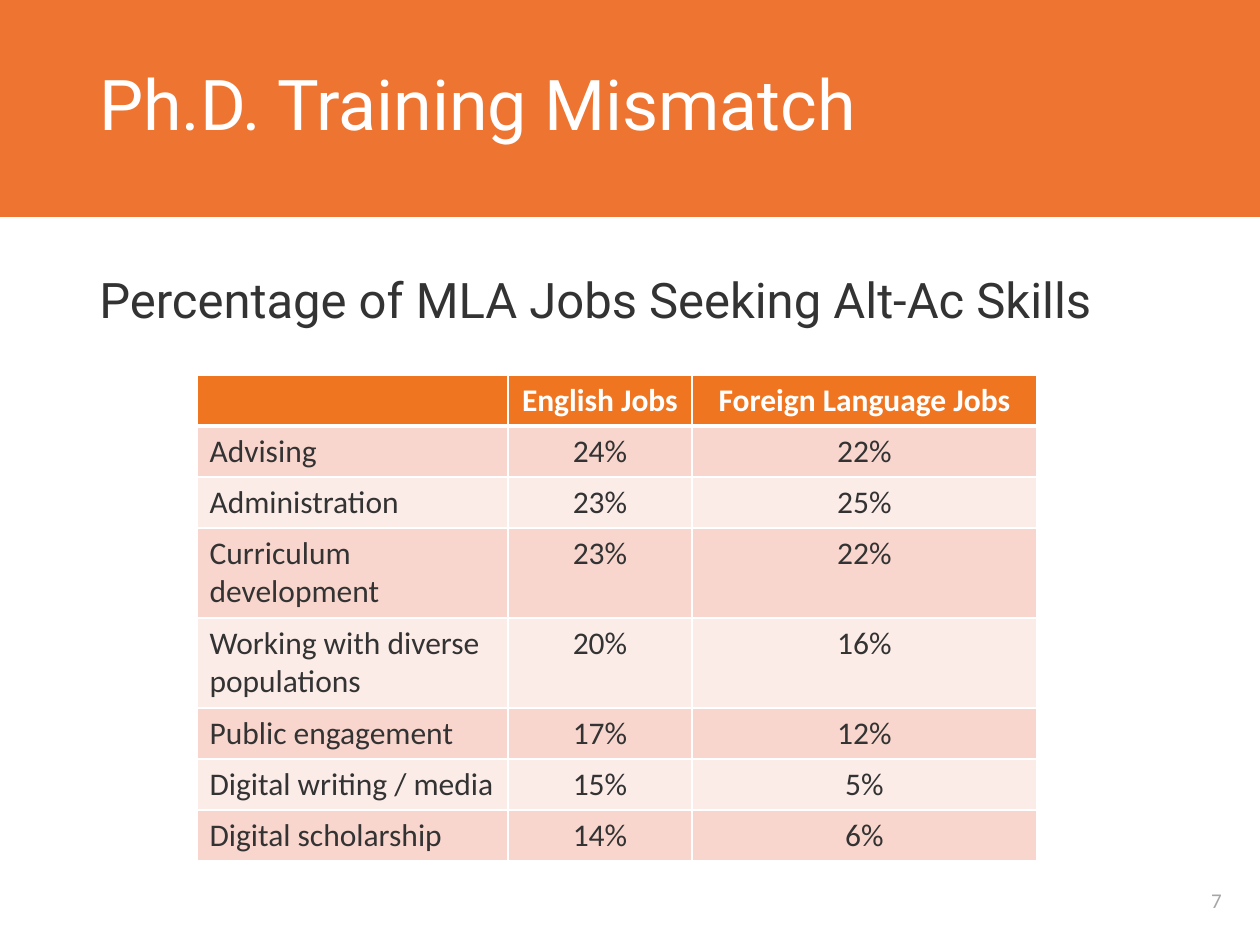
import dataclasses

import lxml.etree
import pptx
import pptx.dml.color
import pptx.enum.shapes
import pptx.enum.text
import pptx.oxml.ns
import pptx.util

PX = pptx.util.Inches(1) / 126
ALIGN = pptx.enum.text.PP_ALIGN
ANCHOR = pptx.enum.text.MSO_ANCHOR


@dataclasses.dataclass(frozen=True)
class Theme:
    banner: str = "EE7531"
    header: str = "EF7521"
    bands: tuple = ("F9D6CD", "FCECE8")
    white: str = "FFFFFF"
    ink: str = "333333"
    muted: str = "A6A6A6"
    heading_font: str = "Roboto"
    table_font: str = "Calibri"
    title_size: int = 40
    body_size: int = 28
    table_size: int = 18
    number_size: int = 12
    rule: int = 1
    header_rule: int = 3


THEME = Theme()
COLUMNS = (311, 184, 345)
ROW_HEIGHT, TALL_ROW_HEIGHT = 51, 90
HEADINGS = ("", "English Jobs", "Foreign Language Jobs")
SKILLS = (
    ("Advising", "24%", "22%"),
    ("Administration", "23%", "25%"),
    ("Curriculum development", "23%", "22%"),
    ("Working with diverse populations", "20%", "16%"),
    ("Public engagement", "17%", "12%"),
    ("Digital writing / media", "15%", "5%"),
    ("Digital scholarship", "14%", "6%"),
)
TALL_ROWS = (3, 4)


def px(n):
    return round(n * PX)


def rgb(value):
    return pptx.dml.color.RGBColor.from_string(value)


def add_run(p, text, font, size, color, bold=False):
    r = p.add_run()
    r.text = text
    r.font.name = font
    r.font.size = pptx.util.Pt(size)
    r.font.color.rgb = rgb(color)
    r.font.bold = bold


def add_banner(s, x, y, w, h):
    sp = s.shapes.add_shape(
        pptx.enum.shapes.MSO_SHAPE.RECTANGLE, px(x), px(y), px(w), px(h))
    sp.shadow.inherit = False
    sp.fill.solid()
    sp.fill.fore_color.rgb = rgb(THEME.banner)
    sp.line.fill.background()


def add_text(s, box, text, font, size, color,
             anchor=ANCHOR.MIDDLE, align=ALIGN.LEFT, spacing=0.9):
    sp = s.shapes.add_textbox(*map(px, box))
    tf = sp.text_frame
    tf.word_wrap = True
    tf.vertical_anchor = anchor
    p = tf.paragraphs[0]
    p.alignment = align
    p.line_spacing = spacing
    add_run(p, text, font, size, color)


def set_borders(cell, top, bottom):
    tc_pr = cell._tc.get_or_add_tcPr()
    widths = {"L": THEME.rule, "R": THEME.rule, "T": top, "B": bottom}
    qn = pptx.oxml.ns.qn
    for side, width in widths.items():
        ln = lxml.etree.SubElement(
            tc_pr, qn(f"a:ln{side}"), w=str(pptx.util.Pt(width)))
        fill = lxml.etree.SubElement(ln, qn("a:solidFill"))
        lxml.etree.SubElement(fill, qn("a:srgbClr"), val=THEME.white)


def fill_cell(cell, text, row, column):
    is_header = row == 0
    set_borders(cell,
                THEME.header_rule if row == 1 else THEME.rule,
                THEME.header_rule if is_header else THEME.rule)
    cell.fill.solid()
    cell.fill.fore_color.rgb = rgb(
        THEME.header if is_header else THEME.bands[(row - 1) % 2])
    p = cell.text_frame.paragraphs[0]
    p.alignment = ALIGN.CENTER if column else ALIGN.LEFT
    if text:
        add_run(p, text, THEME.table_font, THEME.table_size,
                THEME.white if is_header else THEME.ink, is_header)


def add_skills_table(s, x, y):
    rows = (HEADINGS,) + SKILLS
    heights = [TALL_ROW_HEIGHT if i in TALL_ROWS else ROW_HEIGHT
               for i in range(len(rows))]
    table = s.shapes.add_table(
        len(rows), len(COLUMNS), px(x), px(y),
        px(sum(COLUMNS)), px(sum(heights))).table
    for column, width in zip(table.columns, COLUMNS):
        column.width = px(width)
    for i, values in enumerate(rows):
        table.rows[i].height = px(heights[i])
        for j, text in enumerate(values):
            fill_cell(table.cell(i, j), text, i, j)


def main():
    prs = pptx.Presentation()
    prs.slide_width, prs.slide_height = px(1260), px(945)
    s = prs.slides.add_slide(prs.slide_layouts[6])
    add_banner(s, -1, 0, 1262, 217)
    add_text(s, (1173, 876, 87, 49), "7", THEME.table_font,
             THEME.number_size, THEME.muted, align=ALIGN.CENTER, spacing=1.0)
    add_text(s, (87, 0, 1086, 215), "Ph.D. Training Mismatch",
             THEME.heading_font, THEME.title_size, THEME.white)
    add_text(s, (87, 270, 1086, 563),
             "Percentage of MLA Jobs Seeking Alt-Ac Skills",
             THEME.heading_font, THEME.body_size, THEME.ink, ANCHOR.TOP)
    add_skills_table(s, 197, 375)
    prs.save("out.pptx")


if __name__ == "__main__":
    main()
